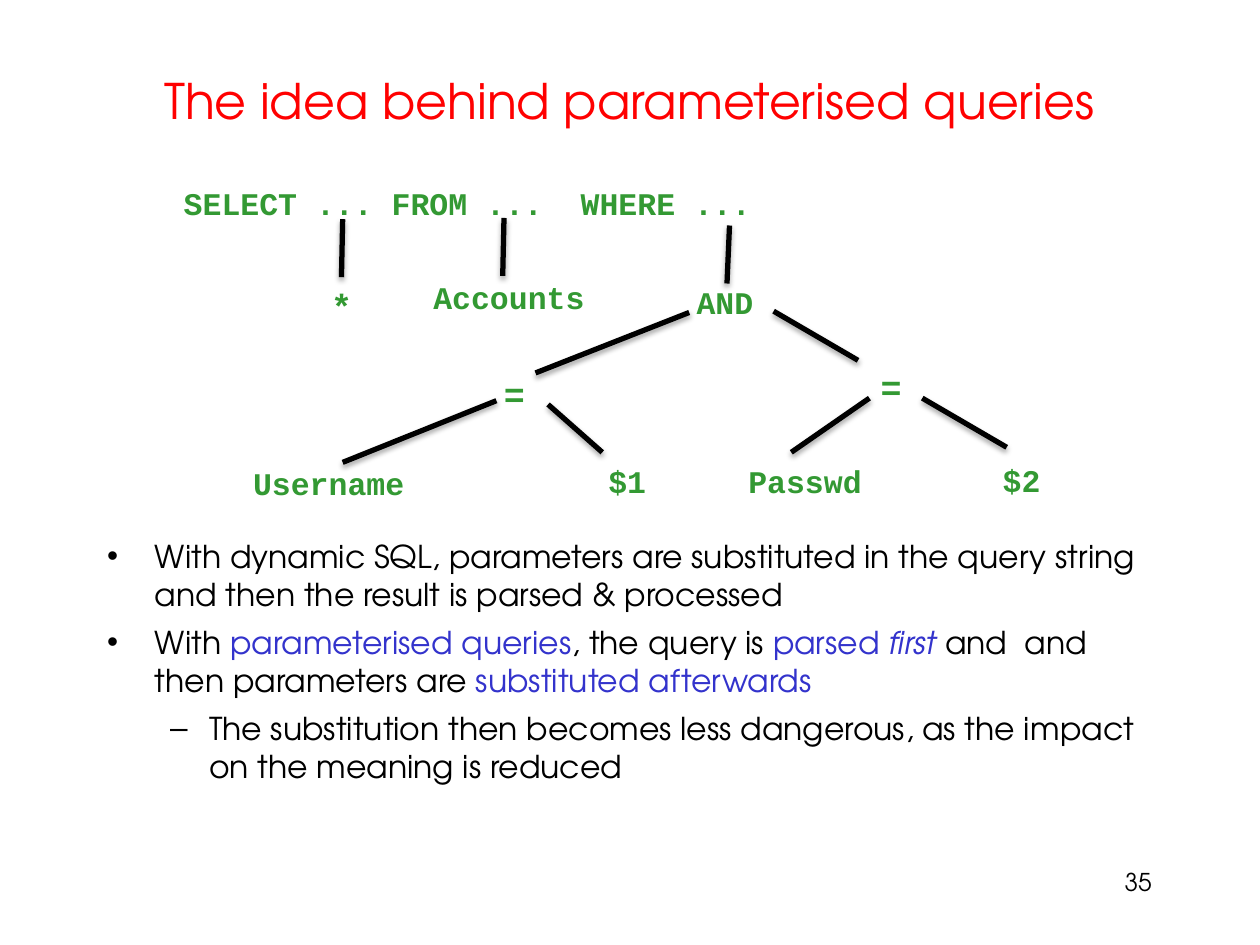
from lxml import etree
from pptx import Presentation
from pptx import util as u
from pptx.dml.color import RGBColor
from pptx.enum import shapes, text
from pptx.oxml import parse_xml
from pptx.oxml.ns import nsdecls, qn

SANS, MONO = "TeX Gyre Adventor", "Courier New"
BLACK, RED, BLUE, GREEN = "000000", "FF0000", "3333CC", "339933"

TITLE = "The idea behind parameterised queries"
BODY = [
    (0, [("With dynamic SQL, parameters are substituted in the query string "
          "and then the result is parsed & processed", {})]),
    (0, [("With ", {}),
         ("parameterised queries", {"color": BLUE}),
         (", the query is ", {}),
         ("parsed ", {"color": BLUE}),
         ("first ", {"color": BLUE, "italic": True}),
         ("and  and then parameters are ", {}),
         ("substituted afterwards", {"color": BLUE})]),
    (1, [("The substitution then becomes less dangerous, as the impact "
          "on the meaning is reduced", {})]),
]
BULLETS = [("•", 0.38, -0.38), ("–", 0.81, -0.31)]
PAGE = "35"
NODES = [
    (" SELECT ... FROM ...  WHERE ...", 18, 1.21, 1.41, 4.88, 0.4),
    ("Accounts", 18, 3.34, 2.16, 1.41, 0.4),
    ("AND", 18, 5.43, 2.2, 0.65, 0.4),
    ("*", 20, 2.53, 2.21, 0.37, 0.33),
    ("=", 20, 3.9, 2.91, 0.37, 0.44),
    ("=", 20, 6.89, 2.85, 0.37, 0.44),
    ("Username", 18, 1.91, 3.63, 1.41, 0.4),
    ("$1", 18, 4.73, 3.62, 0.5, 0.4),
    ("Passwd", 18, 5.84, 3.62, 1.11, 0.4),
    ("$2", 18, 7.86, 3.61, 0.5, 0.4),
]
BRANCHES = [
    (2.72, 1.74, 2.71, 2.2), (4, 1.73, 3.99, 2.19), (5.79, 1.79, 5.77, 2.25),
    (5.47, 2.48, 4.25, 2.96), (6.14, 2.47, 6.81, 2.86),
    (3.94, 3.18, 2.72, 3.67), (4.35, 3.21, 4.78, 3.59),
    (6.9, 3.16, 6.28, 3.59), (7.32, 3.16, 7.99, 3.55),
]
SHADOW = (f'<a:effectLst {nsdecls("a")}><a:outerShdw blurRad="{u.Pt(3.1)}" '
          f'dist="{u.Pt(1.8)}" dir="5400000" rotWithShape="0"><a:srgbClr val="{BLACK}">'
          '<a:alpha val="35000"/></a:srgbClr></a:outerShdw></a:effectLst>')


def rgb(value):
    return RGBColor.from_string(value)


def place(sp, *box):
    for name, value in zip(("left", "top", "width", "height"), box):
        setattr(sp, name, u.Inches(value))


def add_run(p, content, size, font=SANS, color=BLACK, **fmt):
    r = p.add_run()
    r.text = content
    for name, value in {"name": font, "size": u.Pt(size), **fmt}.items():
        setattr(r.font, name, value)
    r.font.color.rgb = rgb(color)


def set_bullet(p, char, margin, indent):
    pPr = p._p.get_or_add_pPr()
    pPr.set("marL", str(u.Inches(margin)))
    pPr.set("indent", str(u.Inches(indent)))
    clr = etree.SubElement(pPr, qn("a:buClr"))
    etree.SubElement(clr, qn("a:srgbClr")).set("val", BLACK)
    etree.SubElement(pPr, qn("a:buChar")).set("char", char)


def add_text(s, content, size, box, align=None, wrap=True, **fmt):
    sp = s.shapes.add_textbox(*map(u.Inches, box))
    tf = sp.text_frame
    tf.word_wrap = wrap
    p = tf.paragraphs[0]
    p.alignment = align
    add_run(p, content, size, **fmt)


def add_branch(s, ends):
    line = s.shapes.add_connector(shapes.MSO_CONNECTOR.STRAIGHT, *map(u.Inches, ends))
    line.line.width = u.Pt(3)
    line.line.color.rgb = rgb(BLACK)
    line._element.spPr.append(parse_xml(SHADOW))


def main():
    prs = Presentation()
    prs.slide_width, prs.slide_height = u.Inches(10), u.Inches(7.5)
    s = prs.slides.add_slide(prs.slide_layouts[1])
    title, body = s.placeholders[0], s.placeholders[1]
    place(title, 0.75, 0.3, 8.49, 0.91)
    place(body, 0.75, 4.21, 8.49, 1.5)
    for sp in (title, body):
        sp.text_frame.auto_size = text.MSO_AUTO_SIZE.NONE

    p = title.text_frame.paragraphs[0]
    p.line_spacing = 1.16
    add_run(p, TITLE, 28, color=RED)

    tf = body.text_frame
    for i, (level, runs) in enumerate(BODY):
        p = tf.add_paragraph() if i else tf.paragraphs[0]
        p.level = level
        p.space_before = u.Pt(6)
        set_bullet(p, *BULLETS[level])
        for content, fmt in runs:
            add_run(p, content, 18, **fmt)

    add_text(s, PAGE, 14, (7.17, 6.83, 2.07, 0.49), text.PP_ALIGN.RIGHT)
    for content, size, *box in NODES:
        add_text(s, content, size, box, wrap=False, font=MONO, color=GREEN, bold=True)
    for ends in BRANCHES:
        add_branch(s, ends)
    prs.save("out.pptx")


if __name__ == "__main__":
    main()
